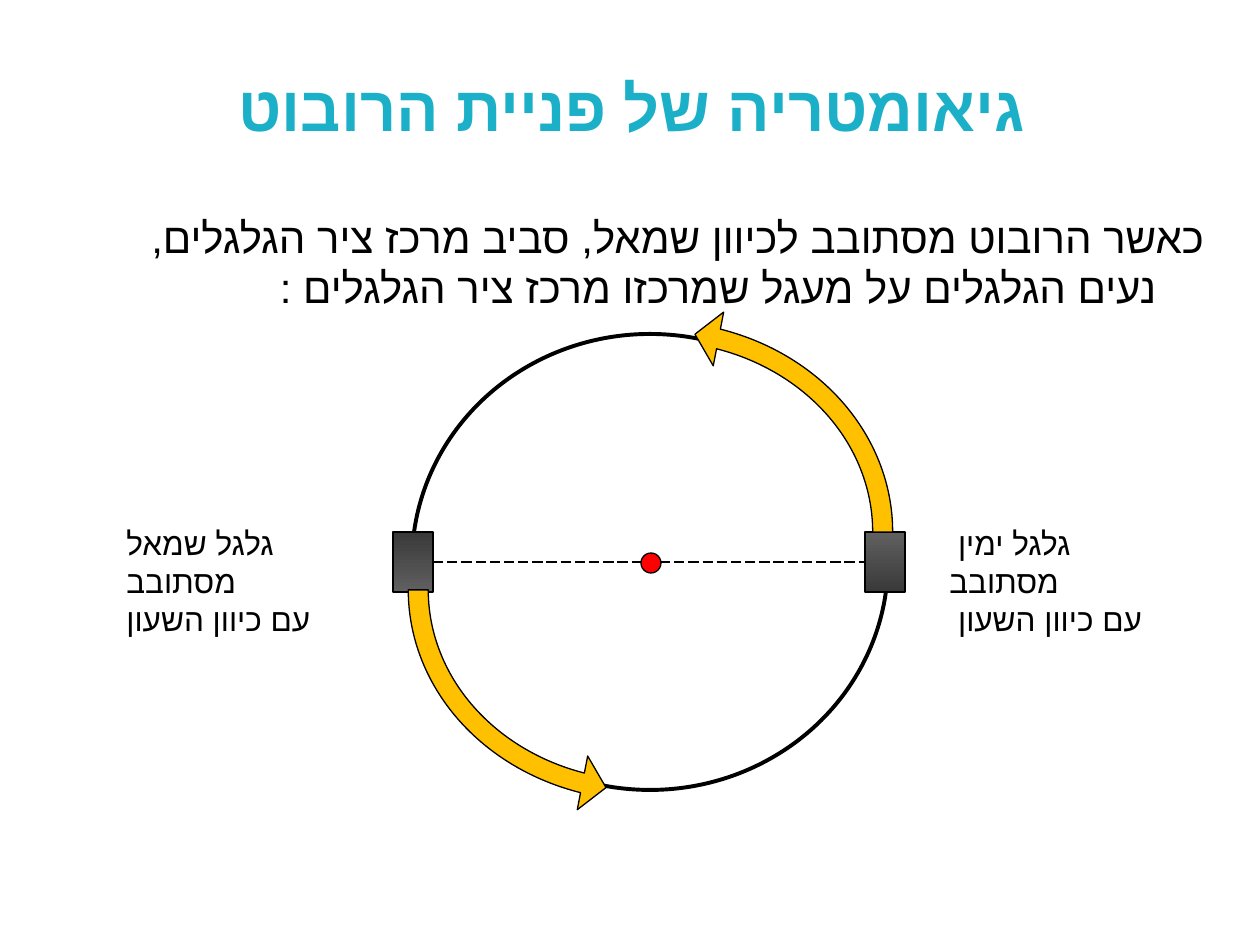
from lxml import etree
from pptx import Presentation
from pptx.dml.color import RGBColor
from pptx.enum.dml import MSO_LINE
from pptx.enum.shapes import MSO_CONNECTOR, MSO_SHAPE
from pptx.enum.text import PP_ALIGN
from pptx.oxml.ns import qn
from pptx.util import Emu, Pt

PX = 9144000 // 1260
OVAL, RECTANGLE, TURN_ARROW = MSO_SHAPE.OVAL, MSO_SHAPE.RECTANGLE, MSO_SHAPE.CIRCULAR_ARROW
STRAIGHT, LONG_DASH = MSO_CONNECTOR.STRAIGHT, MSO_LINE.LONG_DASH
LEFT, CENTER, RIGHT = PP_ALIGN.LEFT, PP_ALIGN.CENTER, PP_ALIGN.RIGHT
SIDE_LEFT, SIDE_RIGHT = 1, 3
BLACK, TEAL, AMBER, RED = "000000", "1CB0C8", "FFC000", "FF0000"
DARK_GREY, LIGHT_GREY = "393939", "606060"


def px(length):
    """Turn whole pixels into EMU."""
    return Emu(length * PX)


def color(hex_code):
    """Turn a hex string into a colour."""
    return RGBColor.from_string(hex_code)


def add_text(slide, box, lines, size, align, ink=BLACK, bold=False, rtl=False, hanging=0):
    """Write paragraphs into a wrapping text box."""
    frame = slide.shapes.add_textbox(*map(px, box)).text_frame
    frame.word_wrap = True
    frame.text = "\n".join(lines)
    for paragraph in frame.paragraphs:
        paragraph.alignment = align
        properties = paragraph._p.get_or_add_pPr()
        if rtl:
            properties.set("rtl", "1")
        if hanging:
            properties.set("marL", str(px(hanging)))
            properties.set("indent", str(-px(hanging)))
        for run in paragraph.runs:
            run.font.name = "Arial"
            run.font.size = Pt(size)
            run.font.bold = bold
            run.font.color.rgb = color(ink)
            etree.SubElement(run._r.get_or_add_rPr(), qn("a:cs"), typeface="Arial")


def add_outlined(slide, kind, box, fill=None, weight=0.75):
    """Add a black-outlined preset shape, filled or hollow."""
    shape = slide.shapes.add_shape(kind, *map(px, box))
    shape.shadow.inherit = False
    shape.line.color.rgb = color(BLACK)
    shape.line.width = Pt(weight)
    if fill:
        shape.fill.solid()
        shape.fill.fore_color.rgb = color(fill)
    else:
        shape.fill.background()
    return shape


def add_wheel(slide, box, top_grey, bottom_grey):
    """Add a wheel shaded from top to bottom."""
    wheel = add_outlined(slide, RECTANGLE, box)
    wheel.fill.gradient()
    wheel.fill.gradient_angle = 270
    for stop, grey in zip(wheel.fill.gradient_stops, (top_grey, bottom_grey)):
        stop.color.rgb = color(grey)
    return wheel


def add_turn_arrow(slide, box, rotation):
    """Add a curved arrow for the path of one wheel."""
    arrow = add_outlined(slide, TURN_ARROW, box, AMBER)
    arrow.rotation = rotation
    arrow._element.spPr.xfrm.set("flipV", "1")
    shaft, head = 20 / box[3], 0.06
    head_angle, end_angle, start_angle = (degrees * 0.6 for degrees in (6.81, 252.2, 180))
    for index, value in enumerate((shaft, head_angle, end_angle, start_angle, head)):
        arrow.adjustments[index] = value


def add_axle(slide, left_wheel, right_wheel):
    """Join the two wheels with a dashed line."""
    axle = slide.shapes.add_connector(STRAIGHT, 0, 0, 0, 0)
    axle.begin_connect(left_wheel, SIDE_RIGHT)
    axle.end_connect(right_wheel, SIDE_LEFT)
    axle.line.color.rgb = color(BLACK)
    axle.line.width = Pt(0.75)
    axle.line.dash_style = LONG_DASH
    etree.SubElement(axle._element.spPr, qn("a:effectLst"))


def add_turning_circle(slide, x, y, width, height):
    """Draw the circle, wheels, arrows, axle and centre within a box."""
    add_outlined(slide, OVAL, (x, y, width, height), weight=2.25)
    wheel_y = y + 198
    left_wheel = add_wheel(slide, (x - 19, wheel_y, 40, 60), DARK_GREY, LIGHT_GREY)
    right_wheel = add_wheel(slide, (x + width - 23, wheel_y, 40, 60), LIGHT_GREY, DARK_GREY)
    add_turn_arrow(slide, (x - 21, y + 28, 507, height), 0)
    add_turn_arrow(slide, (x - 9, y - 30, 507, height), 180)
    add_axle(slide, left_wheel, right_wheel)
    add_outlined(slide, OVAL, (x + width // 2 - 9, y + height // 2 - 9, 20, 20), RED)


def add_heading(slide, x, y, width):
    """Write the title and the explanation below it."""
    add_text(slide, (x, y, width, 88), ["גיאומטריה של פניית הרובוט"], 36, CENTER, TEAL, True, True)
    explanation = ("כאשר הרובוט מסתובב לכיוון שמאל, סביב מרכז ציר הגלגלים, "
                   "נעים הגלגלים על מעגל שמרכזו מרכז ציר הגלגלים :")
    add_text(slide, (x - 1, y + 143, width + 38, 147), [explanation], 24, RIGHT, rtl=True, hanging=48)


def add_wheel_labels(slide, y, width, height):
    """Write the label beside each wheel."""
    labels = (
        (937, [" גלגל ימין מסתובב", " עם כיוון השעון"]),
        (114, ["גלגל שמאל מסתובב", "עם כיוון השעון"]),
    )
    for x, lines in labels:
        add_text(slide, (x, y, width, height), lines, 18, LEFT)


def main():
    """Build and save the slide."""
    deck = Presentation()
    deck.slide_width, deck.slide_height = px(1260), px(945)
    slide = deck.slides.add_slide(deck.slide_layouts[6])
    add_heading(slide, 84, 62, 1096)
    add_turning_circle(slide, 412, 334, 476, 456)
    add_wheel_labels(slide, 518, 220, 126)
    deck.save("out.pptx")


if __name__ == "__main__":
    main()
